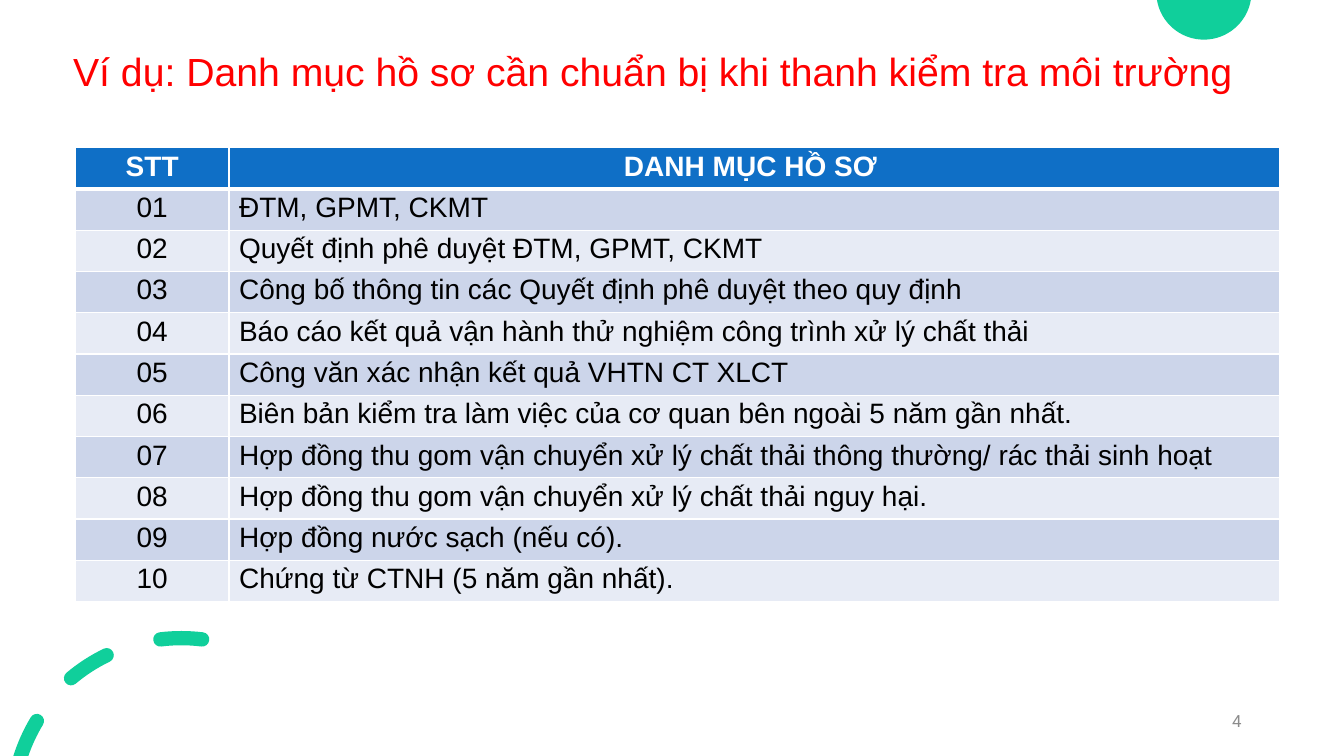
from dataclasses import dataclass
from math import cos, radians, sin, tan

from lxml.etree import SubElement as Sub
from pptx import Presentation as Deck
from pptx.dml.color import RGBColor as Rgb
from pptx.enum.text import MSO_ANCHOR as Anchor, PP_ALIGN as Align
from pptx.oxml.ns import qn
from pptx.util import Cm, Pt

WIDE, HIGH = 33.87, 19.05
HEAD = ("STT", "DANH MỤC HỒ SƠ ")
FILES = (
    "ĐTM, GPMT, CKMT",
    "Quyết định phê duyệt ĐTM, GPMT, CKMT",
    "Công bố thông tin các Quyết định phê duyệt theo quy định",
    "Báo cáo kết quả vận hành thử nghiệm công trình xử lý chất thải",
    "Công văn xác nhận kết quả VHTN CT XLCT",
    "Biên bản kiểm tra làm việc của cơ quan bên ngoài 5 năm gần nhất.",
    "Hợp đồng thu gom vận chuyển xử lý chất thải thông thường/ rác thải sinh hoạt",
    "Hợp đồng thu gom vận chuyển xử lý chất thải nguy hại.",
    "Hợp đồng nước sạch (nếu có).",
    "Chứng từ CTNH (5 năm gần nhất).",
)


@dataclass(frozen=True)
class Theme:
    green: str = "10CF9B"
    red: str = "FF0000"
    gray: str = "8C8C8C"
    white: str = "FFFFFF"
    black: str = "000000"
    blue: str = "0F6FC6"
    bands: tuple = ("CCD5EA", "E7EBF5")
    font: str = "Arial"
    small: str = "Roboto"
    title: int = 28
    body: int = 20
    note: int = 12


def write(frame, text, font, size, color, bold=False, align=Align.LEFT, space=None):
    frame.word_wrap = True
    frame.vertical_anchor = Anchor.MIDDLE
    para = frame.paragraphs[0]
    para.alignment, para.line_spacing = align, space
    run = para.add_run()
    run.text = text
    run.font.name, run.font.size, run.font.bold = font, Pt(size), bold
    run.font.color.rgb = Rgb.from_string(color)


def arc(x, y, size, start, end, parts=1):
    step = radians(end - start) / parts
    pull = 4 / 3 * tan(step / 4)

    def dot(turn, lean):
        return (x + size * (sin(turn) + lean * cos(turn)),
                y - size * (cos(turn) - lean * sin(turn)))

    dots = [dot(radians(start), 0)]
    for i in range(parts):
        turn = radians(start) + i * step
        dots += [dot(turn, pull), dot(turn + step, -pull), dot(turn + step, 0)]
    return dots


def dash(x, y, size, half, start, end, cut=None):
    tip = arc(x, y, size, end, end)[0]
    tail = arc(x, y, size, start, start)[0]
    outer = arc(x, y, size + half, start, end)
    inner = arc(x, y, size - half, end, cut or start)
    if cut:
        inner = arc(x, y, size - half, end, cut)
        join = [inner[-1], outer[0], outer[0]]
    else:
        join = arc(*tail, half, start + 180, start + 360, 2)[1:]
    return outer + arc(*tip, half, end, end + 180, 2)[1:] + inner[1:] + join


class Page:
    """Draw styled elements on one slide."""

    def __init__(self, deck, theme):
        self.theme = theme
        self.slide = deck.slides.add_slide(deck.slide_layouts[5])

    def title(self, text, box):
        shape = self.slide.shapes.title
        shape.left, shape.top, shape.width, shape.height = map(Cm, box)
        write(shape.text_frame, text, self.theme.font, self.theme.title,
              self.theme.red, space=0.9)

    def note(self, text, box):
        shape = self.slide.shapes.add_textbox(*map(Cm, box))
        write(shape.text_frame, text, self.theme.small, self.theme.note,
              self.theme.gray, align=Align.RIGHT)

    def form(self, *rings):
        pen = None
        for ring in rings:
            dots = [(Cm(x), Cm(y)) for x, y in ring]
            if pen is None:
                pen = self.slide.shapes.build_freeform(*dots[0])
            else:
                pen.move_to(*dots[0])
            pen.add_line_segments(dots[1:], close=True)
        shape = pen.convert_to_shape()
        self.bend(shape)
        shape.shadow.inherit = False
        shape.fill.solid()
        shape.fill.fore_color.rgb = Rgb.from_string(self.theme.green)
        shape.line.fill.background()

    def bend(self, shape):
        lines = list(shape._element.iter(qn("a:lnTo")))
        for i in range(0, len(lines), 3):
            curve = lines[i].makeelement(qn("a:cubicBezTo"))
            lines[i].addprevious(curve)
            for line in lines[i:i + 3]:
                curve.append(line[0])
                line.getparent().remove(line)

    def edge(self, cell, top, base):
        props = cell._tc.get_or_add_tcPr()
        for side, width in zip("LRTB", (1, 1, top, base)):
            line = Sub(props, qn(f"a:ln{side}"), w=str(Pt(width)))
            fill = Sub(line, qn("a:solidFill"))
            Sub(fill, qn("a:srgbClr"), val=self.theme.white)

    def table(self, rows, left, top, cols, high):
        look = self.theme
        grid = self.slide.shapes.add_table(
            len(rows), len(cols), Cm(left), Cm(top),
            Cm(sum(cols)), Cm(high * len(rows))).table
        for col, width in zip(grid.columns, cols):
            col.width = Cm(width)
        for r, row in enumerate(rows):
            grid.rows[r].height = Cm(high)
            head = r == 0
            fill = look.blue if head else look.bands[(r - 1) % 2]
            for c, text in enumerate(row):
                cell = grid.cell(r, c)
                self.edge(cell, 3 if r == 1 else 1, 3 if head else 1)
                cell.fill.solid()
                cell.fill.fore_color.rgb = Rgb.from_string(fill)
                write(cell.text_frame, text, look.font, look.body,
                      look.white if head else look.black, bold=head,
                      align=Align.CENTER if head or c == 0 else Align.LEFT)
                cell.vertical_anchor = Anchor.TOP
                cell.margin_top = cell.margin_bottom = Cm(0.08)


def main():
    deck = Deck()
    deck.slide_width, deck.slide_height = Cm(WIDE), Cm(HIGH)
    page = Page(deck, Theme())
    page.form(arc(30.34, -0.2, 1.2, 99.6, 260.4, 2))
    page.form(dash(4.63, 20.4, 4.32, 0.18, -72.54, -58.9, -70.97),
              *(dash(4.57, 20.4, 4.32, 0.18, *span)
                for span in ((-40, -25.8), (-7, 7))))
    page.title("Ví dụ: Danh mục hồ sơ cần chuẩn bị khi thanh kiểm tra môi trường",
               (1.59, 0.03, 30.99, 3.68))
    page.note("4", (23.92, 17.65, 7.62, 1.02))
    rows = [HEAD] + [(f"{i:02}", text) for i, text in enumerate(FILES, 1)]
    page.table(rows, 1.9, 3.72, (3.87, 26.48), 1.04)
    deck.save("out.pptx")


if __name__ == "__main__":
    main()
